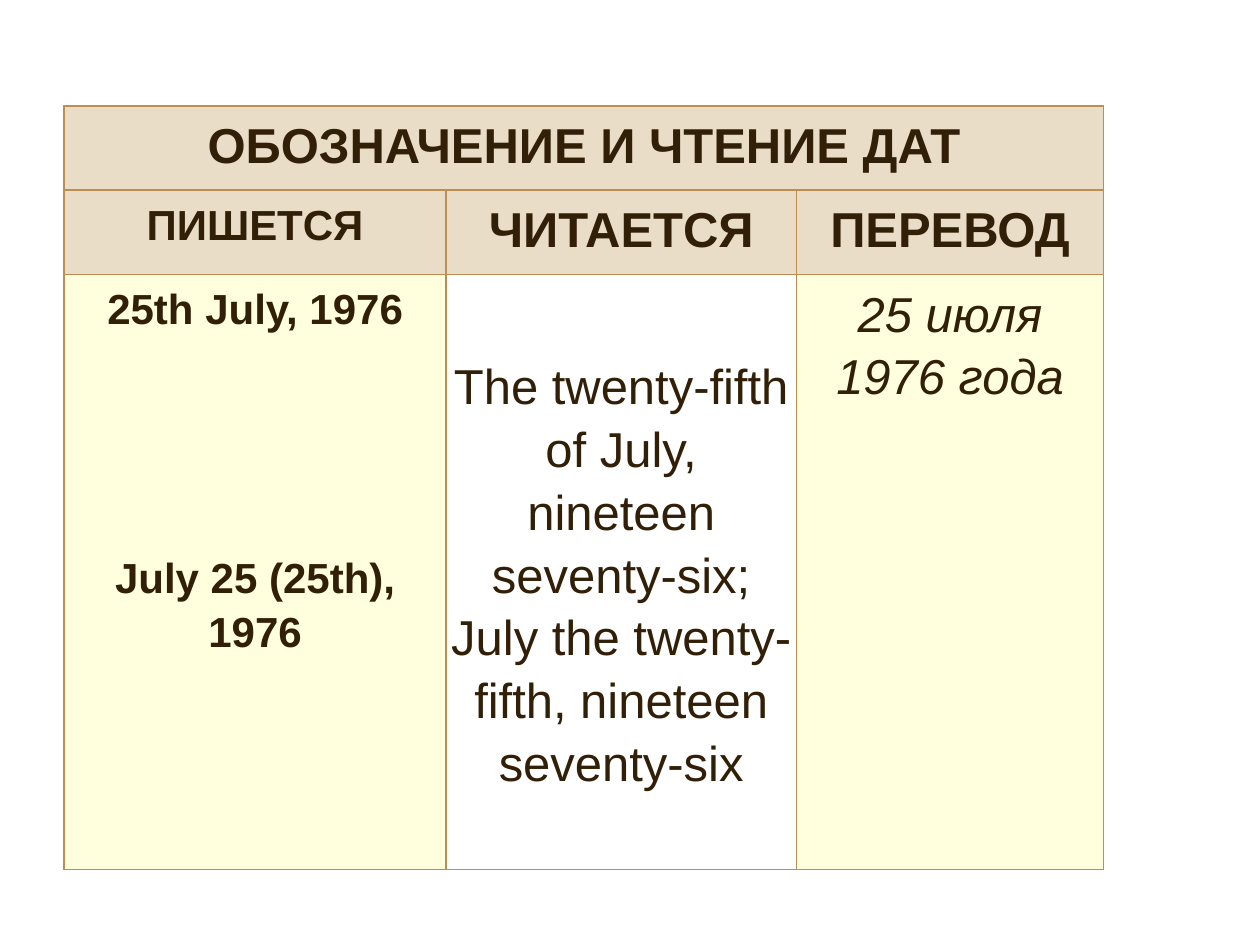
from lxml import etree
from pptx import Presentation
from pptx.dml.color import RGBColor
from pptx.enum.text import MSO_ANCHOR, PP_ALIGN
from pptx.oxml.ns import qn
from pptx.util import Inches, Pt

CENTER = PP_ALIGN.CENTER
TOP, MIDDLE = MSO_ANCHOR.TOP, MSO_ANCHOR.MIDDLE

# Content: (paragraphs, size, style, fill, anchor) per cell
INK, BORDER = "321F08", "BD8E51"
SAND, CREAM, WHITE = "E9DDC8", "FFFFDD", "FFFFFF"
ROWS = [
    [(["ОБОЗНАЧЕНИЕ И ЧТЕНИЕ ДАТ"], 28, "bold", SAND, TOP)],
    [(["ПИШЕТСЯ"], 24, "bold", SAND, TOP),
     (["ЧИТАЕТСЯ"], 28, "bold", SAND, TOP),
     (["ПЕРЕВОД"], 28, "bold", SAND, TOP)],
    [(["25th\u00a0July, 1976", "July 25 (25th), 1976"], 24, "bold", CREAM, TOP),
     (["The twenty-fifth of July, nineteen seventy-six;",
       "July the twenty-fifth, nineteen seventy-six"], 28, "plain", WHITE, MIDDLE),
     (["25 июля 1976 года"], 28, "italic", CREAM, TOP)],
]
COLUMN_WIDTHS = [3.03, 2.78, 2.44]
ROW_HEIGHTS = [0.67, 0.67, 4.72]
WRITTEN_FORMS_GAP = 123  # points between the two written dates


def color(hex_value):
    return RGBColor.from_string(hex_value)


def add_borders(cell):
    properties = cell._tc.get_or_add_tcPr()
    for side in ("lnL", "lnR", "lnT", "lnB"):
        line = etree.SubElement(properties, qn(f"a:{side}"), w=str(Pt(1)))
        solid = etree.SubElement(line, qn("a:solidFill"))
        etree.SubElement(solid, qn("a:srgbClr"), val=BORDER)


def fill_cell(cell, paragraphs, size, style, fill, anchor, gap):
    cell.fill.solid()
    cell.fill.fore_color.rgb = color(fill)
    cell.vertical_anchor = anchor
    cell.margin_left = cell.margin_right = Inches(0.04)
    cell.margin_top = cell.margin_bottom = Inches(0.04)
    for i, text in enumerate(paragraphs):
        frame = cell.text_frame
        paragraph = frame.add_paragraph() if i else frame.paragraphs[0]
        paragraph.alignment = CENTER
        paragraph.line_spacing = 1.15
        if i:
            paragraph.space_before = Pt(gap)
        run = paragraph.add_run()
        run.text = text
        run.font.name = "Arial"
        run.font.size = Pt(size)
        run.font.bold = style == "bold"
        run.font.italic = style == "italic"
        run.font.color.rgb = color(INK)


prs = Presentation()
prs.slide_width, prs.slide_height = Inches(10), Inches(7.5)
slide = prs.slides.add_slide(prs.slide_layouts[6])

# Table grid
dates = slide.shapes.add_table(
    len(ROW_HEIGHTS), len(COLUMN_WIDTHS), Inches(0.51), Inches(0.84),
    Inches(sum(COLUMN_WIDTHS)), Inches(sum(ROW_HEIGHTS))).table
dates.first_row = dates.horz_banding = False
for column, width in zip(dates.columns, COLUMN_WIDTHS):
    column.width = Inches(width)
for row, height in zip(dates.rows, ROW_HEIGHTS):
    row.height = Inches(height)
for cell in dates.iter_cells():
    add_borders(cell)
dates.cell(0, 0).merge(dates.cell(0, 2))

# Cell text and fills
for r, row in enumerate(ROWS):
    for c, content in enumerate(row):
        fill_cell(dates.cell(r, c), *content, gap=0 if c else WRITTEN_FORMS_GAP)

prs.save("out.pptx")
